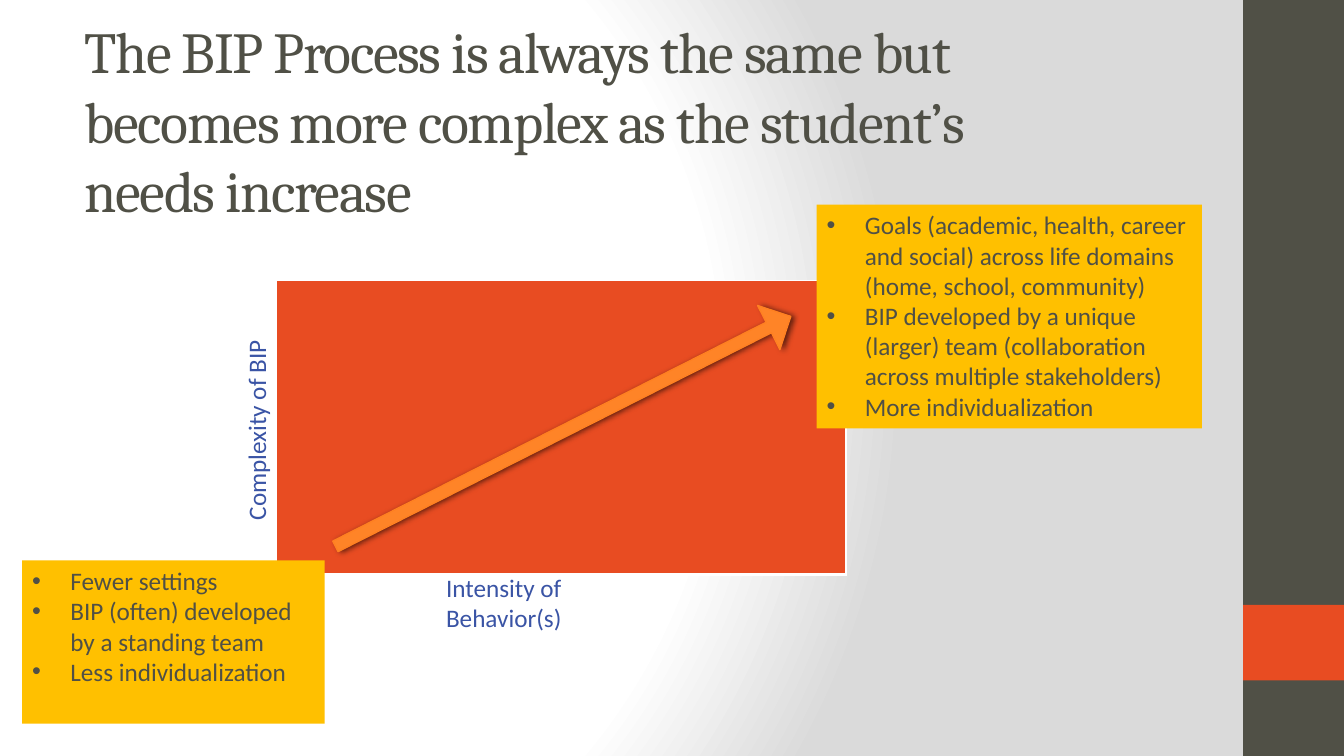
"""Builds a slide on how a BIP grows in complexity with the intensity of behavior."""
from lxml import etree
from pptx import Presentation
from pptx import util as u
from pptx.dml.color import RGBColor
from pptx.enum import shapes, text
from pptx.oxml import parse_xml
from pptx.oxml.ns import nsdecls, qn

PX = 9144
WHITE = RGBColor(0xFF, 0xFF, 0xFF)
SILVER = RGBColor(0xDA, 0xDA, 0xDA)
OLIVE = RGBColor(0x50, 0x50, 0x46)
RED = RGBColor(0xE8, 0x4C, 0x22)
AMBER = RGBColor(0xFF, 0xC0, 0x00)
ORANGE = RGBColor(0xFF, 0x84, 0x27)
ORANGE_EDGE = RGBColor(0xFF, 0x80, 0x21)
BLUE = RGBColor(0x3A, 0x54, 0xA5)


def add_block(kind, box, color):
    sp = s.shapes.add_shape(kind, *[v * PX for v in box])
    sp.shadow.inherit = False
    sp.fill.solid()
    sp.fill.fore_color.rgb = color
    sp.line.fill.background()
    return sp


def style_text(p, size, font, color):
    p.alignment = text.PP_ALIGN.LEFT
    for r in p.runs:
        r.font.size = u.Pt(size)
        r.font.name = font
        r.font.color.rgb = color


prs = Presentation()
prs.slide_width, prs.slide_height = 1333 * PX, 750 * PX
s = prs.slides.add_slide(prs.slide_layouts[5])

fill = s.background.fill
fill.gradient()
grad = fill._fill._gradFill
for child in list(grad):
    grad.remove(child)
stops = "".join(
    f'<a:gs pos="{pos * 1000}"><a:srgbClr val="{color}"/></a:gs>'
    for pos, color in ((0, WHITE), (75, WHITE), (100, SILVER)))
grad.append(parse_xml(f'<a:gsLst {nsdecls("a")}>{stops}</a:gsLst>'))
grad.append(parse_xml(
    f'<a:path {nsdecls("a")} path="circle">'
    '<a:fillToRect l="20000" t="50000" r="100000" b="50000"/></a:path>'))

add_block(shapes.MSO_SHAPE.RECTANGLE, (1233, 0, 100, 750), OLIVE)
add_block(shapes.MSO_SHAPE.RECTANGLE, (1233, 600, 100, 75), RED)

title = s.shapes.title
title.left, title.top, title.width, title.height = [v * PX for v in (74, 69, 990, 100)]
tf = title.text_frame
tf.text = "The BIP Process is always the same but becomes more complex as the student’s needs increase"
tf.word_wrap = True
tf.auto_size = text.MSO_AUTO_SIZE.NONE
tf.vertical_anchor = text.MSO_ANCHOR.MIDDLE
style_text(tf.paragraphs[0], 41.4, "Cambria", OLIVE)
tf.paragraphs[0].runs[0]._r.get_or_add_rPr().set("spc", "-100")

table = s.shapes.add_table(1, 1, 274 * PX, 278 * PX, 565 * PX, 292 * PX).table
table.first_row = table.horz_banding = False
cell = table.cell(0, 0)
tc_pr = cell._tc.get_or_add_tcPr()
for side, width in (("L", 1), ("R", 1), ("T", 1), ("B", 3)):
    tc_pr.append(parse_xml(
        f'<a:ln{side} {nsdecls("a")} w="{u.Pt(width)}"><a:solidFill>'
        f'<a:srgbClr val="{WHITE}"/></a:solidFill></a:ln{side}>'))
cell.fill.solid()
cell.fill.fore_color.rgb = RED

axes = [
    ("Complexity of BIP", (130, 382, 248, 40), 270, "horz"),
    ("Intensity of Behavior(s)", (534, 461, 50, 253), 90, "vert270"),
]
for label, box, rotation, direction in axes:
    sp = s.shapes.add_textbox(*[v * PX for v in box])
    sp.rotation = rotation
    tf = sp.text_frame
    tf.text = label
    tf.word_wrap = True
    tf.auto_size = text.MSO_AUTO_SIZE.SHAPE_TO_FIT_TEXT
    tf._txBody.bodyPr.set("vert", direction)
    style_text(tf.paragraphs[0], 18, "Calibri", BLUE)

cards = [
    ((810, 203, 382, 222), [
        "Goals (academic, health, career and social) across life domains (home, school, community)",
        "BIP developed by a unique (larger) team (collaboration across multiple stakeholders)",
        "More individualization"]),
    ((22, 556, 300, 162), [
        "Fewer settings",
        "BIP (often) developed by a standing team",
        "Less individualization"]),
]
for box, points in cards:
    sp = add_block(shapes.MSO_SHAPE.RECTANGLE, box, AMBER)
    tf = sp.text_frame
    tf.text = "\n".join(points)
    tf.word_wrap = True
    tf.vertical_anchor = text.MSO_ANCHOR.TOP
    for p in tf.paragraphs:
        style_text(p, 18, "Calibri", OLIVE)
        p_pr = p._p.get_or_add_pPr()
        p_pr.set("marL", str(38 * PX))
        p_pr.set("indent", str(-38 * PX))
        etree.SubElement(p_pr, qn("a:buFont")).set("typeface", "Arial")
        etree.SubElement(p_pr, qn("a:buChar")).set("char", "•")

arrow = add_block(shapes.MSO_SHAPE.UP_ARROW, (534, 175, 49, 506), ORANGE)
arrow.rotation = 63.2
arrow.adjustments[0] = 0.24
arrow.adjustments[1] = 0.5
arrow.line.color.rgb = ORANGE_EDGE
arrow.line.width = u.Pt(1)
arrow._element.spPr.find(qn("a:effectLst")).append(parse_xml(
    f'<a:outerShdw {nsdecls("a")} blurRad="{u.Pt(4)}" dist="{u.Pt(2)}" dir="0">'
    '<a:srgbClr val="000000"><a:alpha val="60000"/></a:srgbClr></a:outerShdw>'))

prs.save("out.pptx")
